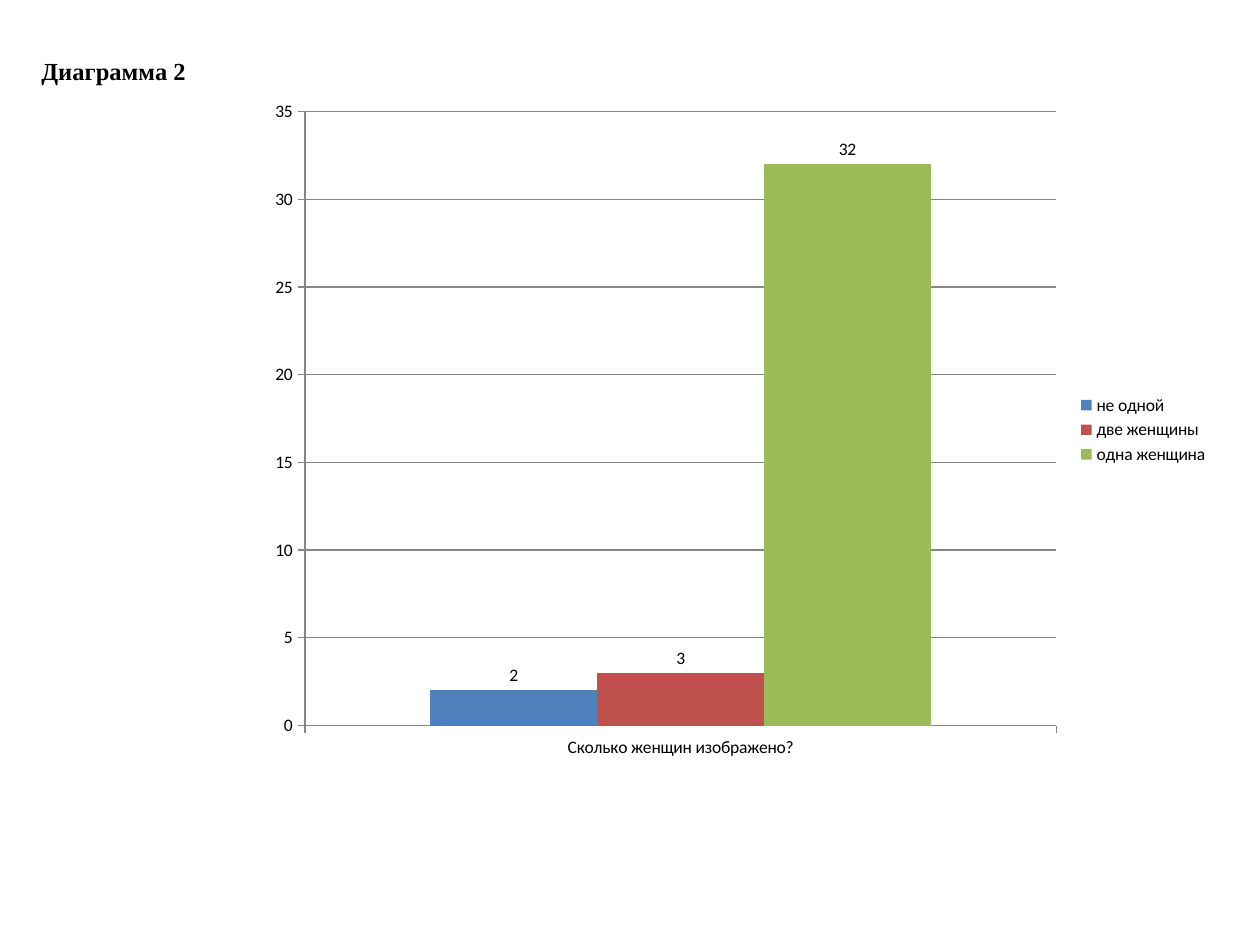
from dataclasses import dataclass

from pptx import Presentation
from pptx import util as u
from pptx.chart import data
from pptx.dml import color
from pptx.enum import chart as ch
from pptx.enum import text


@dataclass(frozen=True)
class Theme:
    ink: str = "000000"
    axis: str = "868686"
    title_font: str = "Times New Roman"
    chart_font: str = "Calibri"
    title_size: int = 14
    chart_size: int = 10


theme = Theme()
answers = [
    ("не одной", 2, "4F81BD"),
    ("две женщины", 3, "C0504D"),
    ("одна женщина", 32, "9BBB59"),
]

deck = Presentation()
deck.slide_width, deck.slide_height = u.Cm(25.4), u.Cm(19.05)
page = deck.slides.add_slide(deck.slide_layouts[5])

title = page.shapes.title
title.left, title.top = u.Cm(0.58), u.Cm(0.99)
title.width, title.height = u.Cm(25.4), u.Cm(0.86)
frame = title.text_frame
frame.text = "Диаграмма 2"
frame.word_wrap = True
frame.auto_size = text.MSO_AUTO_SIZE.NONE
frame.vertical_anchor = text.MSO_ANCHOR.MIDDLE
para = frame.paragraphs[0]
para.alignment = text.PP_ALIGN.LEFT
span = para.runs[0]
span.font.name = theme.title_font
span.font.size = u.Pt(theme.title_size)
span.font.bold = True
span.font.color.rgb = color.RGBColor.from_string(theme.ink)

chart_data = data.CategoryChartData()
chart_data.categories = ["Сколько женщин изображено?"]
for name, count, fill in answers:
    chart_data.add_series(name, [count])

chart = page.shapes.add_chart(
    ch.XL_CHART_TYPE.COLUMN_CLUSTERED,
    u.Cm(5.16), u.Cm(1.78), u.Cm(19.46), u.Cm(13.77), chart_data,
).chart
chart.has_title = False
chart.font.name = theme.chart_font
chart.font.size = u.Pt(theme.chart_size)
chart.font.color.rgb = color.RGBColor.from_string(theme.ink)
chart.has_legend = True
chart.legend.position = ch.XL_LEGEND_POSITION.RIGHT
chart.legend.include_in_layout = False

value_axis = chart.value_axis
value_axis.minimum_scale, value_axis.maximum_scale = 0, 35
value_axis.major_unit = 5
value_axis.has_major_gridlines = True
for axis in (chart.category_axis, value_axis):
    axis.major_tick_mark = ch.XL_TICK_MARK.OUTSIDE
for ruled in (chart.category_axis, value_axis, value_axis.major_gridlines):
    ruled.format.line.color.rgb = color.RGBColor.from_string(theme.axis)
    ruled.format.line.width = u.Pt(0.75)

plot = chart.plots[0]
plot.vary_by_categories = False
plot.gap_width = 150
plot.overlap = 0
for series, (name, count, fill) in zip(plot.series, answers):
    series.format.fill.solid()
    series.format.fill.fore_color.rgb = color.RGBColor.from_string(fill)
    series.data_labels.show_value = True
    series.data_labels.position = ch.XL_LABEL_POSITION.OUTSIDE_END

deck.save("out.pptx")
